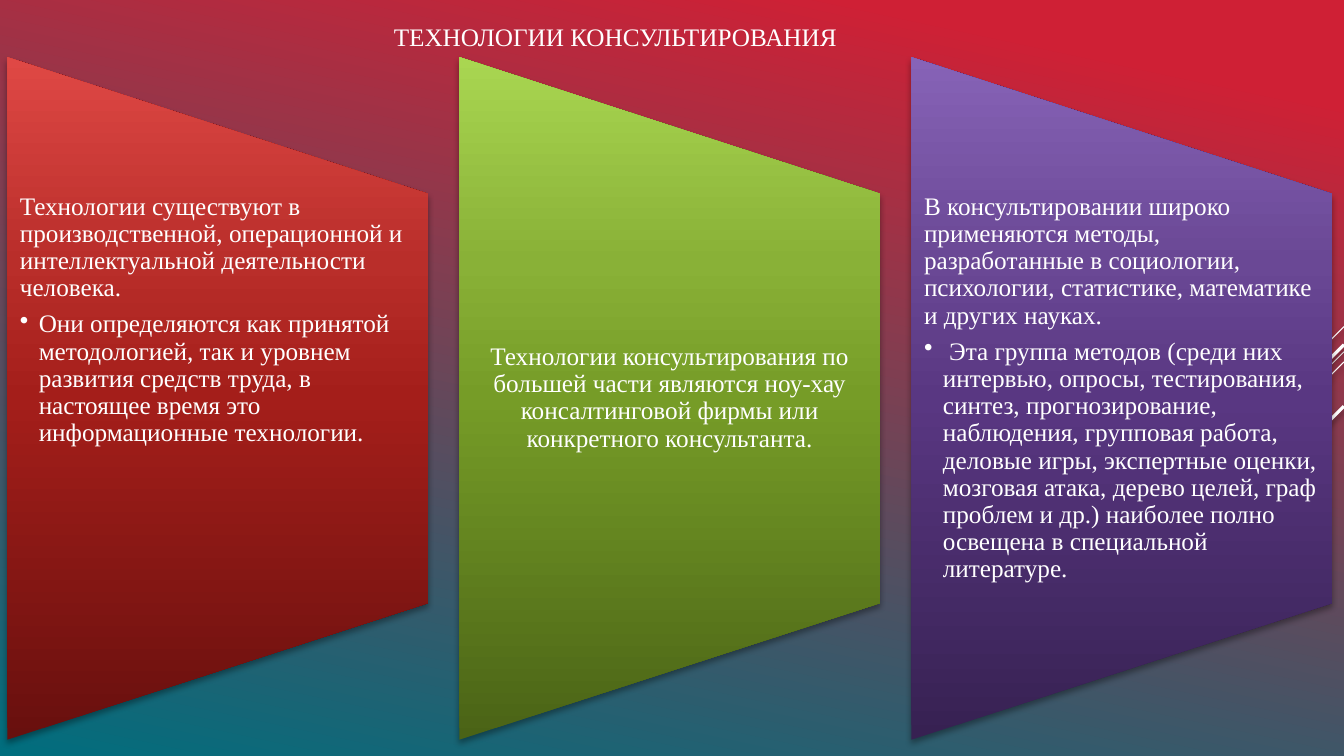
import lxml.etree
import pptx
import pptx.dml.color
import pptx.enum.shapes
import pptx.enum.text
import pptx.oxml.ns
import pptx.util

Pt = pptx.util.Pt
RGB = pptx.dml.color.RGBColor
ALIGN = pptx.enum.text.PP_ALIGN
ANCHOR = pptx.enum.text.MSO_ANCHOR

FONT = "Times New Roman"
WHITE = RGB(0xFF, 0xFF, 0xFF)
BLACK = RGB(0, 0, 0)
SKY = [(10, RGB(0xCF, 0x20, 0x35)), (100, RGB(0x00, 0x6E, 0x7E))]
STOPS = (0, 50, 70, 100)
RED = (RGB(0x68, 0x10, 0x0E), RGB(0xA4, 0x1E, 0x1A),
       RGB(0xB9, 0x2E, 0x2A), RGB(0xDF, 0x48, 0x45))
GREEN = (RGB(0x4A, 0x63, 0x16), RGB(0x76, 0x9C, 0x27),
         RGB(0x89, 0xB1, 0x37), RGB(0xA9, 0xD6, 0x51))
VIOLET = (RGB(0x37, 0x21, 0x52), RGB(0x59, 0x37, 0x82),
          RGB(0x6A, 0x48, 0x95), RGB(0x87, 0x63, 0xB7))

WIDE, HIGH = 960, 540
LEFT, PITCH = 5.2, 322.9
PANEL_W, PANEL_H, MID = 300.4, 487.5, 284.6
TEXT_TOP, TEXT_H = 138.2, 292.4
INDENT = 13.5

RAYS = [(233.3, 72, 0.75), (251.3, 234.7, 0.75), (258.5, 149.3, 0.75),
        (246.2, 137.5, 2.25), (290.2, 100.1, 2.25)]

PANELS = [
    (RED, [
        "Технологии существуют в производственной, операционной и "
        "интеллектуальной деятельности человека.",
        "Они определяются как принятой методологией, так и уровнем развития "
        "средств труда, в настоящее время это информационные технологии."]),
    (GREEN, [
        "Технологии консультирования по большей части являются ноу-хау "
        "консалтинговой фирмы или конкретного консультанта."]),
    (VIOLET, [
        "В консультировании широко применяются методы, разработанные в "
        "социологии, психологии, статистике, математике и других науках.",
        " Эта группа методов (среди них интервью, опросы, тестирования, "
        "синтез, прогнозирование, наблюдения, групповая работа, деловые "
        "игры, экспертные оценки, мозговая атака, дерево целей, граф "
        "проблем и др.) наиболее полно освещена в специальной литературе."]),
]


def add_tag(node, name, **attrs):
    return lxml.etree.SubElement(node, pptx.oxml.ns.qn(name), attrs)


def set_grad(item, fill, stops, angle):
    fill.gradient()
    fill.gradient_angle = 360 - angle
    grad = item.element.xpath(".//a:gradFill")[0]
    grad.set("rotWithShape", "0")
    marks = grad.xpath("./a:gsLst")[0]
    for mark in list(marks):
        marks.remove(mark)
    for place, color in stops:
        mark = add_tag(marks, "a:gs", pos=str(place * 1000))
        add_tag(mark, "a:srgbClr", val=str(color))


def add_shade(item):
    node = add_tag(item.element.spPr, "a:effectLst")
    shade = add_tag(node, "a:outerShdw", blurRad=str(Pt(4)), dist=str(Pt(3)),
                    dir="5400000", rotWithShape="0")
    color = add_tag(shade, "a:srgbClr", val=str(BLACK))
    add_tag(color, "a:alpha", val="35000")


def add_ray(slide, top, size, width):
    ray = slide.shapes.add_connector(
        pptx.enum.shapes.MSO_CONNECTOR.STRAIGHT,
        Pt(WIDE), Pt(top), Pt(WIDE - size), Pt(top + size))
    ray.line.color.rgb = WHITE
    ray.line.width = Pt(width)
    add_shade(ray)


def set_font(para, align):
    para.alignment = align
    para.font.name = FONT
    para.font.size = Pt(18)
    para.font.color.rgb = WHITE


def set_bullet(para):
    props = para._p.get_or_add_pPr()
    props.set("marL", str(Pt(INDENT)))
    props.set("indent", str(Pt(-INDENT)))
    add_tag(props, "a:buChar", char="•")


def add_panel(slide, left, colors):
    panel = slide.shapes.add_shape(
        pptx.enum.shapes.MSO_SHAPE.FLOWCHART_MANUAL_OPERATION,
        Pt(left + (PANEL_W - PANEL_H) / 2), Pt(MID - PANEL_W / 2),
        Pt(PANEL_H), Pt(PANEL_W))
    panel.rotation = 270
    set_grad(panel, panel.fill, zip(STOPS, colors), 270)
    panel.line.fill.background()
    add_shade(panel)


def add_text(slide, left, texts):
    box = slide.shapes.add_textbox(Pt(left), Pt(TEXT_TOP),
                                   Pt(PANEL_W), Pt(TEXT_H))
    frame = box.text_frame
    frame.word_wrap = True
    frame.margin_left = frame.margin_right = Pt(9)
    frame.margin_top = frame.margin_bottom = 0
    lone = len(texts) == 1
    frame.vertical_anchor = ANCHOR.MIDDLE if lone else ANCHOR.TOP
    frame.text = "\n".join(texts)
    for rank, para in enumerate(frame.paragraphs):
        set_font(para, ALIGN.CENTER if lone else ALIGN.LEFT)
        para.line_spacing = 0.9
        para.space_after = Pt(2.7 if rank else 6.3)
        if rank:
            set_bullet(para)


def set_title(slide, text):
    title = slide.shapes.title
    title.left, title.top = Pt(212.4), Pt(11.5)
    title.width, title.height = Pt(454.3), Pt(29)
    frame = title.text_frame
    frame.text = text
    frame.word_wrap = True
    frame.auto_size = pptx.enum.text.MSO_AUTO_SIZE.NONE
    frame.vertical_anchor = ANCHOR.TOP
    set_font(frame.paragraphs[0], ALIGN.CENTER)


def main():
    deck = pptx.Presentation()
    deck.slide_width, deck.slide_height = Pt(WIDE), Pt(HIGH)
    slide = deck.slides.add_slide(deck.slide_layouts[5])
    set_grad(slide, slide.background.fill, SKY, 102)
    set_title(slide, "ТЕХНОЛОГИИ КОНСУЛЬТИРОВАНИЯ")
    for ray in RAYS:
        add_ray(slide, *ray)
    for rank, (colors, texts) in enumerate(PANELS):
        left = LEFT + rank * PITCH
        add_panel(slide, left, colors)
        add_text(slide, left, texts)
    deck.save("out.pptx")


if __name__ == "__main__":
    main()
